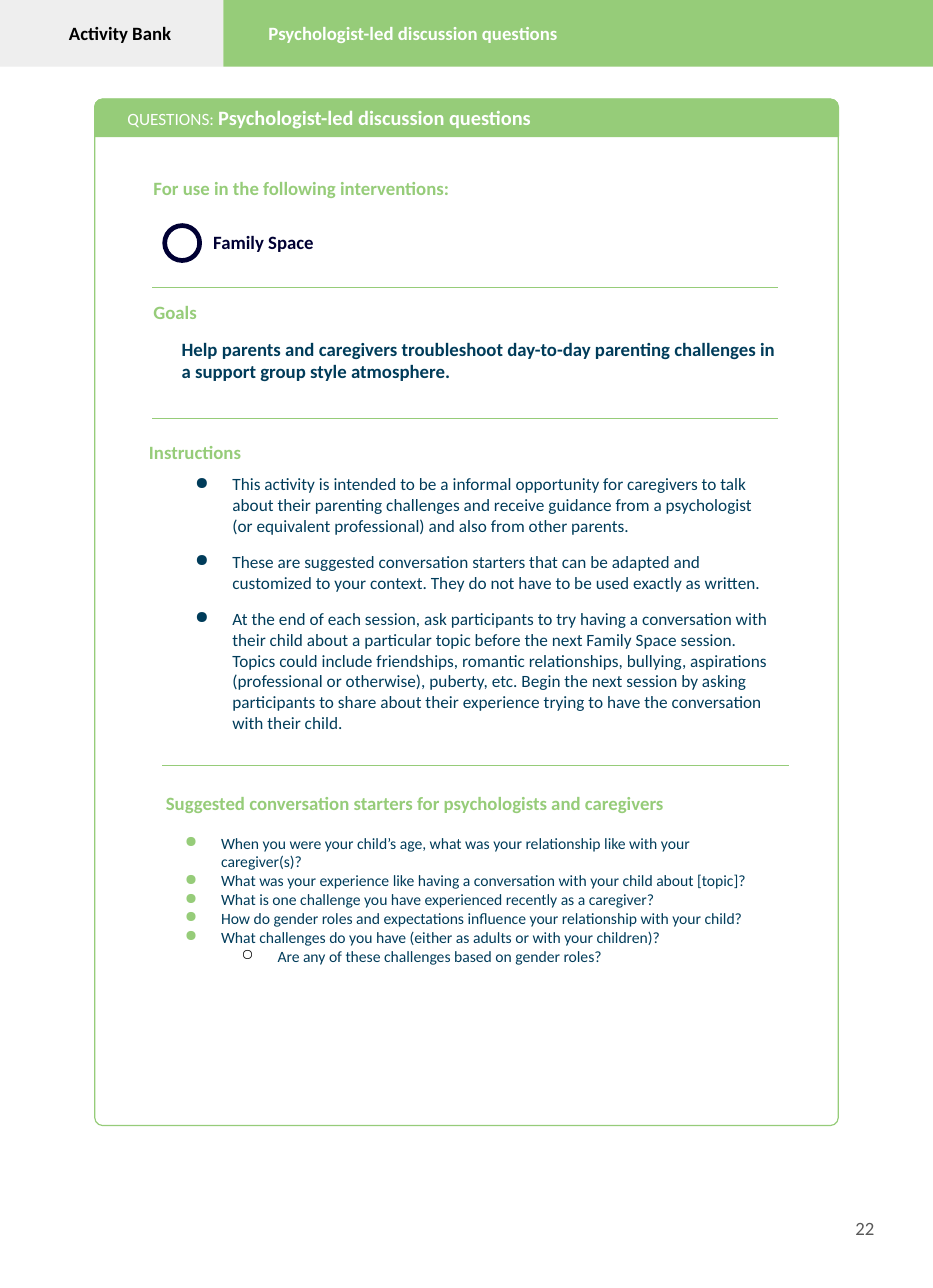
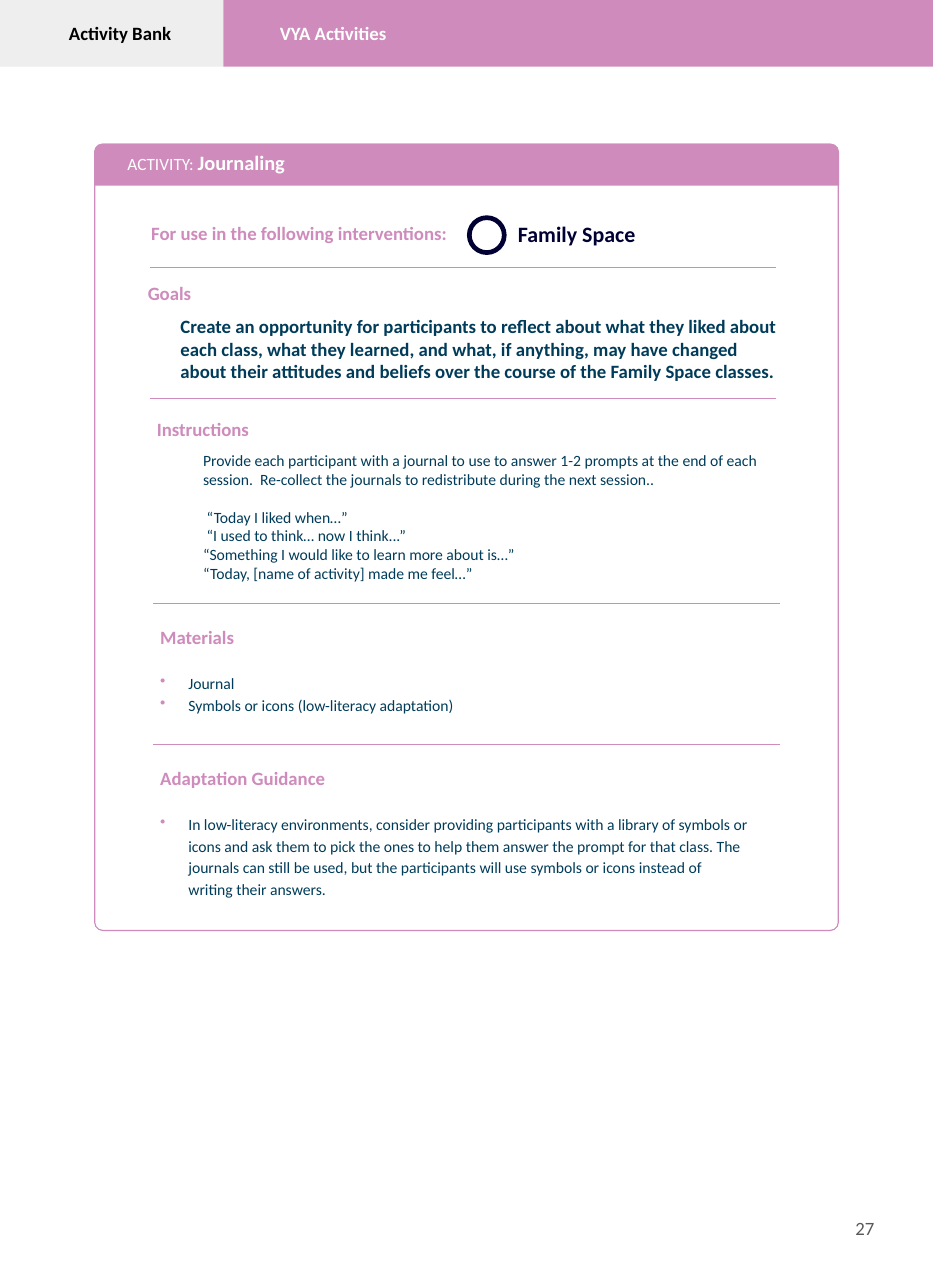
from lxml import etree
from pptx import Presentation
from pptx import util as u
from pptx.dml.color import RGBColor
from pptx.enum import shapes, text
from pptx.oxml.ns import qn

EMU_PER_PX = 9144  # 100 px to the inch
WIDTH, HEIGHT = 827, 1142
BAND_HEIGHT, TAB_WIDTH = 59, 198
CARD_LEFT, CARD_WIDTH, CORNER = 84, 659, 7
RULE_WIDTH = 555
GREEN, PINK = "96CC79", "CE8BBC"
TEAL, NAVY, GREY = "003C5A", "000033", "595959"
WHITE, BLACK, PALE = "FFFFFF", "000000", "EEEEEE"


def px(*lengths):
    return [u.Emu(length * EMU_PER_PX) for length in lengths]


def rgb(hex_string):
    return RGBColor.from_string(hex_string)


def add_run(paragraph, words, size=12, color=TEAL, bold=False):
    run = paragraph.add_run()
    run.text = words
    font = run.font
    font.name, font.size, font.bold = "Calibri", u.Pt(size), bold
    font.color.rgb = rgb(color)


def format_paragraph(paragraph, align=text.PP_ALIGN.LEFT, indent=0, hang=0,
                     before=0, spacing=None, bullet=None, bullet_color=TEAL):
    paragraph.alignment = align
    paragraph.space_before = u.Pt(before)
    if spacing:
        paragraph.line_spacing = spacing
    margin, first = px(indent, -hang)
    properties = paragraph._p.get_or_add_pPr()
    properties.set("marL", str(margin))
    properties.set("indent", str(first))
    if bullet:
        color = etree.SubElement(properties, qn("a:buClr"))
        etree.SubElement(color, qn("a:srgbClr"), val=bullet_color)
        etree.SubElement(properties, qn("a:buChar"), char=bullet)


def format_frame(frame, inset=0, anchor=text.MSO_ANCHOR.TOP):
    frame.word_wrap = True
    frame.auto_size = text.MSO_AUTO_SIZE.NONE
    frame.vertical_anchor = anchor
    frame.margin_left, frame.margin_top, frame.margin_right, frame.margin_bottom = px(*[inset] * 4)


class ActivityDeck:
    """Holds the presentation, the current slide and its accent colour."""

    def __init__(self):
        self.deck = Presentation()
        self.deck.slide_width, self.deck.slide_height = px(WIDTH, HEIGHT)

    def start(self, title, number, accent, title_indent=0):
        """Add a slide with the top band, its title and the page number."""
        self.accent = accent
        self.slide = self.deck.slides.add_slide(self.deck.slide_layouts[5])
        self.shape(shapes.MSO_SHAPE.RECTANGLE, 0, 0, TAB_WIDTH, BAND_HEIGHT, fill=PALE)
        self.shape(shapes.MSO_SHAPE.RECTANGLE, TAB_WIDTH, 0, WIDTH - TAB_WIDTH, BAND_HEIGHT, fill=accent)
        self.text("Activity Bank", 0, 9, 213, 57, inset=10, color=BLACK, bold=True,
                  align=text.PP_ALIGN.CENTER)
        heading = self.slide.shapes.title
        heading.element.getparent().append(heading.element)  # in front of the band
        heading.left, heading.top, heading.width, heading.height = px(228, 9, 531, 57)
        format_frame(heading.text_frame, inset=10)
        paragraph = heading.text_frame.paragraphs[0]
        format_paragraph(paragraph, indent=title_indent)
        add_run(paragraph, title, color=WHITE, bold=True)
        self.text(str(number), 735, 1045, 50, 87, inset=10, color=GREY,
                  align=text.PP_ALIGN.RIGHT, anchor=text.MSO_ANCHOR.MIDDLE)

    def shape(self, kind, x, y, w, h, fill=WHITE, line=None, weight=0.75):
        shape = self.slide.shapes.add_shape(kind, *px(x, y, w, h))
        shape.shadow.inherit = False
        shape.fill.solid()
        shape.fill.fore_color.rgb = rgb(fill)
        if line:
            shape.line.color.rgb = rgb(line)
            shape.line.width = u.Pt(weight)
        else:
            shape.line.fill.background()
        return shape

    def text(self, content, x, y, w, h, inset=0, anchor=text.MSO_ANCHOR.TOP,
             size=12, color=TEAL, bold=False, **layout):
        """Write a string, or a list with one string for each paragraph."""
        frame = self.slide.shapes.add_textbox(*px(x, y, w, h)).text_frame
        format_frame(frame, inset, anchor)
        for index, words in enumerate([content] if isinstance(content, str) else content):
            paragraph = frame.add_paragraph() if index else frame.paragraphs[0]
            format_paragraph(paragraph, **layout)
            add_run(paragraph, words, size, color, bold)
        return frame

    def card(self, kind, name, y, header_height, height):
        """Draw the rounded frame with its coloured header."""
        frame = self.shape(shapes.MSO_SHAPE.ROUNDED_RECTANGLE, CARD_LEFT, y, CARD_WIDTH, height,
                           line=self.accent)
        frame.adjustments[0] = CORNER / min(CARD_WIDTH, height)
        header = self.shape(shapes.MSO_SHAPE.ROUND_2_SAME_RECTANGLE, CARD_LEFT, y, CARD_WIDTH,
                            header_height, fill=self.accent, line=self.accent, weight=1)
        header.adjustments[0] = CORNER / header_height
        label = self.text(kind + ": ", 113, y + 5, 483, 30, size=11, color=WHITE)
        add_run(label.paragraphs[0], name, 13, WHITE, bold=True)

    def heading(self, words, x, y):
        self.text(words, x, y, 522, 22, color=self.accent, bold=True)

    def goal(self, words, x, y):
        self.text(words, x, y, 530, 62, bold=True)

    def rule(self, x, y):
        line = self.slide.shapes.add_connector(shapes.MSO_CONNECTOR.STRAIGHT,
                                               *px(x, y, x + RULE_WIDTH, y))
        line.line.color.rgb = rgb(self.accent)
        line.line.width = u.Pt(0.75)
        etree.SubElement(line.element.spPr, qn("a:effectLst"))

    def family_space(self, x, y, label_y, size):
        self.shape(shapes.MSO_SHAPE.OVAL, x, y, 31, 31, line=NAVY, weight=3)
        self.text("Family Space", x + 43, label_y, 120, 21, size=size, color=NAVY, bold=True,
                  spacing=0.75, anchor=text.MSO_ANCHOR.MIDDLE)

    def material_list(self, items, y):
        self.text(items, 141, y, 522, 90, size=10, indent=26, hang=25, spacing=1.15,
                  bullet="•", bullet_color=self.accent)


def discussion_questions(page):
    page.start("Psychologist-led discussion questions", 22, GREEN)
    page.card("QUESTIONS", "Psychologist-led discussion questions", 88, 33, 910)
    page.heading("For use in the following interventions:", 136, 157)
    page.family_space(146, 200, 206, 12)
    page.rule(135, 255)
    page.heading("Goals", 136, 267)
    page.goal("Help parents and caregivers troubleshoot day-to-day parenting challenges in "
              "a support group style atmosphere.", 161, 299)
    page.rule(135, 371)
    page.heading("Instructions", 132, 391)
    page.text([
        "This activity is intended to be a informal opportunity for caregivers to talk about "
        "their parenting challenges and receive guidance from a psychologist (or equivalent "
        "professional) and also from other parents.",
        "These are suggested conversation starters that can be adapted and customized to your "
        "context. They do not have to be used exactly as written.",
        "At the end of each session, ask participants to try having a conversation with their "
        "child about a particular topic before the next Family Space session. Topics could "
        "include friendships, romantic relationships, bullying, aspirations (professional or "
        "otherwise), puberty, etc. Begin the next session by asking participants to share about "
        "their experience trying to have the conversation with their child.",
    ], 156, 420, 531, 256, size=11, indent=50, hang=33, before=10, bullet="●")
    page.rule(144, 679)
    page.heading("Suggested conversation starters for psychologists and caregivers", 147, 702)
    starters = page.text([
        "When you were your child’s age, what was your relationship like with your caregiver(s)?",
        "What was your experience like having a conversation with your child about [topic]?",
        "What is one challenge you have experienced recently as a caregiver?",
        "How do gender roles and expectations influence your relationship with your child?",
        "What challenges do you have (either as adults or with your children)?",
    ], 146, 739, 522, 120, size=10, indent=50, hang=32, bullet="●", bullet_color=GREEN)
    follow_up = starters.add_paragraph()
    follow_up.level = 1
    format_paragraph(follow_up, indent=100, hang=32, bullet="○", bullet_color=BLACK)
    add_run(follow_up, "Are any of these challenges based on gender roles?", 10)


def journaling(page):
    page.start("VYA Activities", 27, PINK, title_indent=10)
    page.card("ACTIVITY", "Journaling", 128, 36, 697)
    page.heading("For use in the following interventions:", 134, 197)
    page.family_space(416, 193, 199, 14)
    page.rule(133, 237)
    page.heading("Goals", 131, 250)
    page.goal("Create an opportunity for participants to reflect about what they liked about each "
              "class, what they learned, and what, if anything, may have changed about their "
              "attitudes and beliefs over the course of the Family Space classes.", 160, 279)
    page.rule(133, 353)
    page.heading("Instructions", 139, 370)
    page.text("Provide each participant with a journal to use to answer 1-2 prompts at the end of "
              "each session.  Re-collect the journals to redistribute during the next session..",
              180, 400, 514, 36, size=10)
    page.text([
        " “Today I liked when…”",
        " “I used to think… now I think...”",
        "“Something I would like to learn more about is…”",
        "“Today, [name of activity] made me feel…”",
    ], 180, 450, 514, 70, size=10)
    page.rule(136, 535)
    page.heading("Materials", 142, 555)
    page.material_list(["Journal", "Symbols or icons (low-literacy adaptation)"], 595)
    page.rule(136, 660)
    page.heading("Adaptation Guidance", 142, 680)
    page.material_list([
        "In low-literacy environments, consider providing participants with a library of symbols "
        "or icons and ask them to pick the ones to help them answer the prompt for that class. "
        "The journals can still be used, but the participants will use symbols or icons instead "
        "of writing their answers.",
    ], 720)


def main():
    page = ActivityDeck()
    discussion_questions(page)
    journaling(page)
    page.deck.save("out.pptx")


if __name__ == "__main__":
    main()
